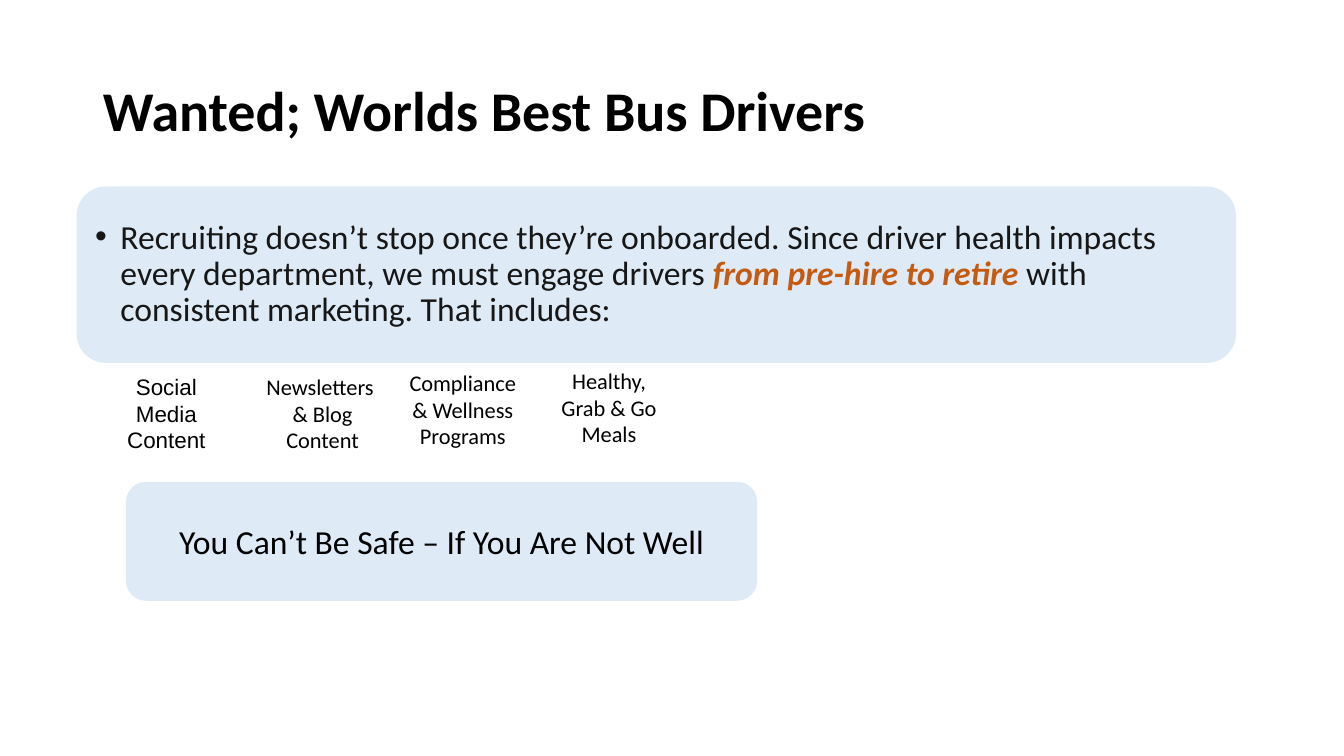
import pptx
import pptx.util
import pptx.dml.color
import pptx.enum.shapes
import pptx.enum.text
import pptx.oxml.ns
from lxml import etree

Inches = pptx.util.Inches
Pt = pptx.util.Pt
RGBColor = pptx.dml.color.RGBColor
Align = pptx.enum.text.PP_ALIGN
Anchor = pptx.enum.text.MSO_ANCHOR
Fit = pptx.enum.text.MSO_AUTO_SIZE
qn = pptx.oxml.ns.qn

BLACK = RGBColor(0x00, 0x00, 0x00)
INK = RGBColor(0x18, 0x17, 0x17)
RUST = RGBColor(0xC5, 0x5A, 0x11)
PALE = RGBColor(0xDE, 0xEB, 0xF7)

TOPICS = [
    ((1.1, 3.65, 1.1, 0.91), "Arial", ["Social Media", "Content"]),
    ((2.27, 3.65, 1.86, 0.91), "Calibri", ["Newsletters ", "& Blog", "Content"]),
    ((3.9, 3.61, 1.38, 0.91), "Calibri", ["Compliance & Wellness Programs"]),
    ((5.35, 3.59, 1.38, 0.91), "Calibri", ["Healthy, Grab & Go Meals"]),
]
PITCH = [
    ("Recruiting doesn’t stop once they’re onboarded. Since driver health "
     "impacts every department, we must engage drivers ", False),
    ("from pre-hire to retire ", True),
    ("with consistent marketing. That includes:", False),
]


def place(shape, box):
    shape.left, shape.top, shape.width, shape.height = map(Inches, box)


def style(para, size, align, face="Calibri", color=BLACK):
    para.alignment = align
    para.font.size = Pt(size)
    para.font.name = face
    para.font.color.rgb = color


def setup(frame, anchor=Anchor.MIDDLE, fit=Fit.NONE):
    frame.word_wrap = True
    frame.auto_size = fit
    frame.vertical_anchor = anchor


def paint(shape):
    shape.fill.solid()
    shape.fill.fore_color.rgb = PALE
    shape.line.fill.background()


def add_title(slide, text):
    title = slide.shapes.title
    place(title, (0.92, 0.4, 11.5, 1.45))
    setup(title.text_frame)
    para = title.text_frame.paragraphs[0]
    para.text = text
    para.line_spacing = 0.9
    style(para, 40, Align.LEFT)
    para.font.bold = True


def add_pitch(slide):
    body = slide.placeholders[1]
    place(body, (0.76, 1.85, 11.5, 1.75))
    # Rounded outline for the placeholder
    geom = etree.SubElement(body._element.spPr, qn("a:prstGeom"), prst="roundRect")
    etree.SubElement(geom, qn("a:avLst"))
    paint(body)
    setup(body.text_frame)
    para = body.text_frame.paragraphs[0]
    para.line_spacing = 0.9
    para.space_before = Pt(0)
    # Hanging bullet
    props = para._p.get_or_add_pPr()
    props.set("marL", str(Inches(0.25)))
    props.set("indent", str(Inches(-0.25)))
    etree.SubElement(props, qn("a:buFont"), typeface="Arial")
    etree.SubElement(props, qn("a:buChar"), char="•")
    style(para, 24, Align.LEFT, color=INK)
    for text, strong in PITCH:
        run = para.add_run()
        run.text = text
        if strong:
            run.font.bold = run.font.italic = True
            run.font.color.rgb = RUST


def add_topic(slide, box, face, lines):
    label = slide.shapes.add_textbox(*map(Inches, box))
    frame = label.text_frame
    setup(frame, Anchor.TOP, Fit.SHAPE_TO_FIT_TEXT)
    frame.text = "\n".join(lines)
    for para in frame.paragraphs:
        style(para, 16, Align.CENTER, face)


def add_motto(slide, box, text):
    panel = slide.shapes.add_shape(
        pptx.enum.shapes.MSO_SHAPE.ROUNDED_RECTANGLE, *map(Inches, box))
    panel.shadow.inherit = False
    paint(panel)
    setup(panel.text_frame)
    para = panel.text_frame.paragraphs[0]
    para.text = text
    style(para, 24, Align.CENTER)


def main():
    deck = pptx.Presentation()
    deck.slide_width, deck.slide_height = Inches(13.33), Inches(7.5)
    slide = deck.slides.add_slide(deck.slide_layouts[1])

    # Heading and message
    add_title(slide, "Wanted; Worlds Best Bus Drivers")
    add_pitch(slide)

    # Marketing topics
    for box, face, lines in TOPICS:
        add_topic(slide, box, face, lines)

    # Closing motto
    add_motto(slide, (1.25, 4.78, 6.26, 1.18),
              "You Can’t Be Safe – If You Are Not Well")
    deck.save("out.pptx")


if __name__ == "__main__":
    main()
